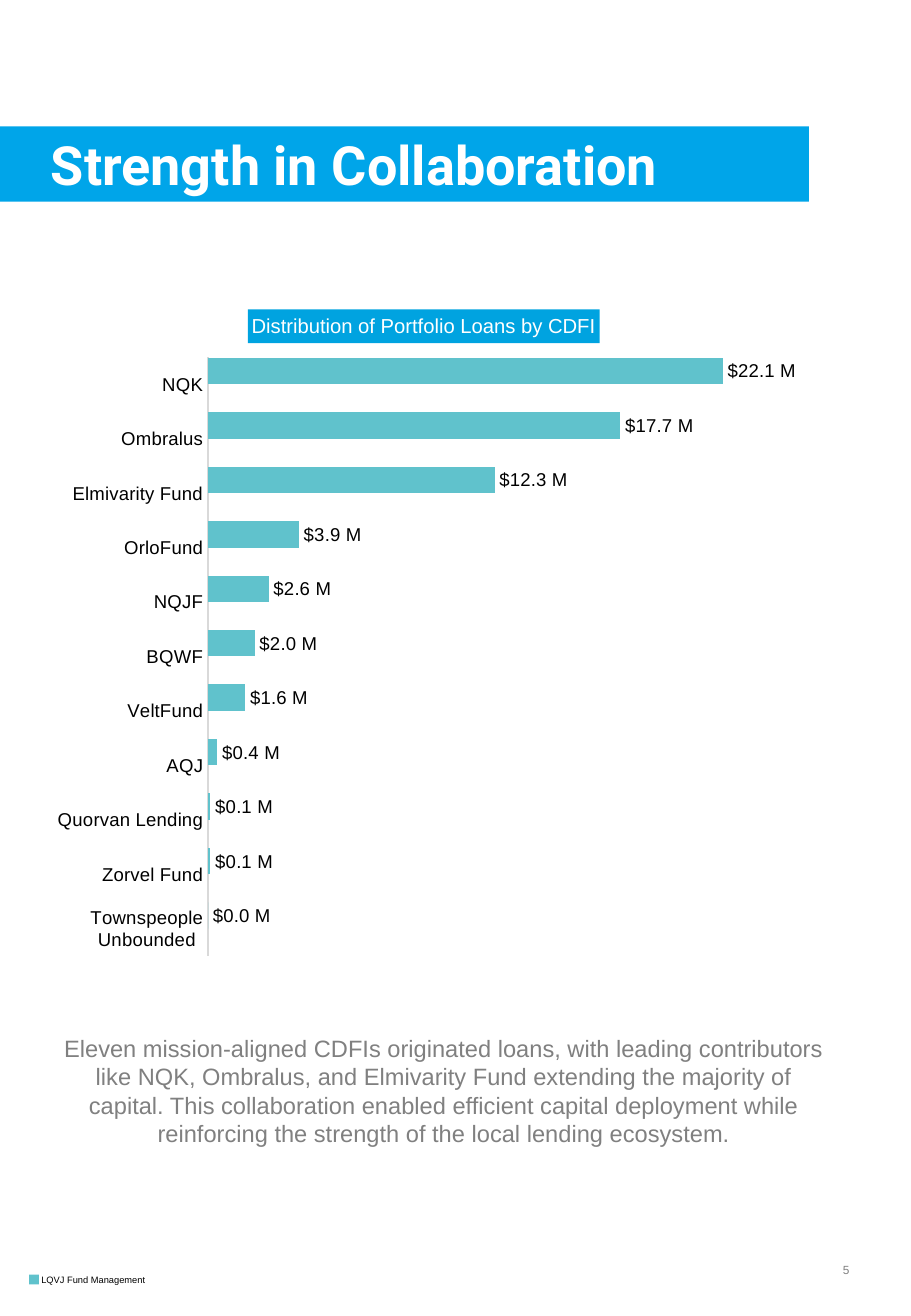
from lxml import etree
from pptx import Presentation
from pptx.chart.data import CategoryChartData
from pptx.dml.color import RGBColor
from pptx.enum.chart import XL_CHART_TYPE, XL_LABEL_POSITION, XL_TICK_LABEL_POSITION, XL_TICK_MARK
from pptx.enum.shapes import MSO_SHAPE
from pptx.enum.text import MSO_ANCHOR, PP_ALIGN
from pptx.oxml.ns import qn
from pptx.util import Inches, Pt

BLUE = RGBColor(0x00, 0xA5, 0xE9)
TITLE_BLUE = RGBColor(0x00, 0xA3, 0xE0)
TEAL = RGBColor(0x60, 0xC2, 0xCC)
SILVER = RGBColor(0xBC, 0xBE, 0xC0)
AXIS_GRAY = RGBColor(0xD9, 0xD9, 0xD9)
GRAY = RGBColor(0x80, 0x80, 0x80)
BLACK = RGBColor(0x00, 0x00, 0x00)
WHITE = RGBColor(0xFF, 0xFF, 0xFF)

LOANS = [
    ("NQK", 22_100_000),
    ("Ombralus", 17_700_000),
    ("Elmivarity Fund", 12_300_000),
    ("OrloFund", 3_900_000),
    ("NQJF", 2_600_000),
    ("BQWF", 2_000_000),
    ("VeltFund", 1_600_000),
    ("AQJ", 400_000),
    ("Quorvan Lending", 100_000),
    ("Zorvel Fund", 100_000),
    ("Townspeople Unbounded", 0),
]
SUMMARY = (
    "Eleven mission-aligned CDFIs originated loans, with leading contributors like "
    "NQK, Ombralus, and Elmivarity Fund extending the majority of capital. This "
    "collaboration enabled efficient capital deployment while reinforcing the "
    "strength of the local lending ecosystem."
)


def style_font(font, size, color, name="Arial", bold=False):
    font.size = Pt(size)
    font.name = name
    font.bold = bold
    font.color.rgb = color


def write_text(text_frame, text, align=PP_ALIGN.LEFT, **style):
    paragraph = text_frame.paragraphs[0]
    paragraph.alignment = align
    run = paragraph.add_run()
    run.text = text
    style_font(run.font, **style)


def set_layout(element, before, x, y, **settings):
    """Place a chart part by fractions of the chart area."""
    for old_layout in element.findall(qn("c:layout")):
        element.remove(old_layout)
    layout = etree.Element(qn("c:layout"))
    manual = etree.SubElement(layout, qn("c:manualLayout"))
    values = {**settings, "xMode": "edge", "yMode": "edge", "x": x, "y": y}
    for name in ("layoutTarget", "xMode", "yMode", "x", "y", "w", "h"):
        if name in values:
            etree.SubElement(manual, qn(f"c:{name}")).set("val", str(values[name]))
    element.find(qn(before)).addprevious(layout)


class SlideBuilder:
    def __init__(self, slide):
        self.slide = slide

    def rectangle(self, left, top, width, height, color):
        shape = self.slide.shapes.add_shape(
            MSO_SHAPE.RECTANGLE, Inches(left), Inches(top), Inches(width), Inches(height))
        shape.shadow.inherit = False
        shape.fill.solid()
        shape.fill.fore_color.rgb = color
        shape.line.fill.background()

    def text(self, left, top, width, height, text, inset=True, wrap=True,
             anchor=MSO_ANCHOR.TOP, **style):
        box = self.slide.shapes.add_textbox(
            Inches(left), Inches(top), Inches(width), Inches(height))
        frame = box.text_frame
        frame.word_wrap = wrap
        frame.vertical_anchor = anchor
        if not inset:
            frame.margin_left = frame.margin_right = 0
            frame.margin_top = frame.margin_bottom = 0
        write_text(frame, text, **style)

    def bar_chart(self, left, top, width, height, title, rows):
        data = CategoryChartData()
        data.categories = [name for name, _ in rows]
        data.add_series("Series 1", [value for _, value in rows])
        data.add_series("Series 2", [None] * len(rows))
        chart = self.slide.shapes.add_chart(
            XL_CHART_TYPE.BAR_CLUSTERED, Inches(left), Inches(top),
            Inches(width), Inches(height), data).chart
        style_font(chart.font, 10, BLACK, "Calibri")
        chart.has_legend = False

        # Chart title on its own band
        chart.has_title = True
        chart_title = chart.chart_title
        write_text(chart_title.text_frame, title, align=PP_ALIGN.CENTER, size=12, color=WHITE)
        chart_title.include_in_layout = False
        chart_title.format.fill.solid()
        chart_title.format.fill.fore_color.rgb = TITLE_BLUE
        set_layout(chart.element.find(".//" + qn("c:title")), "c:overlay", 0.27, 0.028)
        set_layout(chart.element.find(".//" + qn("c:plotArea")), "c:barChart",
                   0.218, 0.098, w=0.761, h=0.882, layoutTarget="inner")

        # Axes
        category_axis = chart.category_axis
        category_axis.reverse_order = True
        category_axis.major_tick_mark = XL_TICK_MARK.NONE
        category_axis.minor_tick_mark = XL_TICK_MARK.NONE
        category_axis.tick_label_position = XL_TICK_LABEL_POSITION.NEXT_TO_AXIS
        category_axis.format.line.color.rgb = AXIS_GRAY
        category_axis.format.line.width = Pt(0.75)
        style_font(category_axis.tick_labels.font, 11, BLACK)
        value_axis = chart.value_axis
        value_axis.minimum_scale = 0
        value_axis.maximum_scale = 25_000_000
        value_axis.major_tick_mark = XL_TICK_MARK.NONE
        value_axis.has_major_gridlines = False
        value_axis.visible = False

        # Bars and value labels
        plot = chart.plots[0]
        plot.vary_by_categories = False
        plot.gap_width = 6
        plot.overlap = 0
        for series, color in zip(plot.series, (TEAL, SILVER)):
            series.format.fill.solid()
            series.format.fill.fore_color.rgb = color
        labels = plot.series[0].data_labels
        labels.show_value = True
        labels.position = XL_LABEL_POSITION.OUTSIDE_END
        labels.number_format = '"$"#,##0.0,,\\ "M"'
        labels.number_format_is_linked = False
        style_font(labels.font, 11, BLACK)


def main():
    presentation = Presentation()
    presentation.slide_width = Inches(7.5)
    presentation.slide_height = Inches(10.83)
    builder = SlideBuilder(presentation.slides.add_slide(presentation.slide_layouts[6]))

    # Footer
    builder.rectangle(0.24, 10.49, 0.08, 0.08, TEAL)
    builder.text(0.34, 10.49, 0.93, 0.1, "LQVJ Fund Management", inset=False, wrap=False,
                 size=5.5, color=BLACK)

    # Heading band
    builder.rectangle(0, 1.04, 6.66, 0.62, BLUE)
    builder.text(0.42, 1.08, 6.47, 0.94, "Strength in Collaboration", inset=False,
                 size=32, color=WHITE, name="Roboto", bold=True)

    # Page number
    builder.text(6.67, 10.34, 0.42, 0.22, "5", anchor=MSO_ANCHOR.MIDDLE,
                 align=PP_ALIGN.RIGHT, size=7, color=GRAY)

    # Chart and summary
    builder.bar_chart(0.34, 2.39, 6.3, 5.59, "Distribution of Portfolio Loans by CDFI", LOANS)
    builder.text(0.42, 8.46, 6.47, 1.04, SUMMARY, align=PP_ALIGN.CENTER, size=14, color=GRAY)

    presentation.save("out.pptx")


if __name__ == "__main__":
    main()
